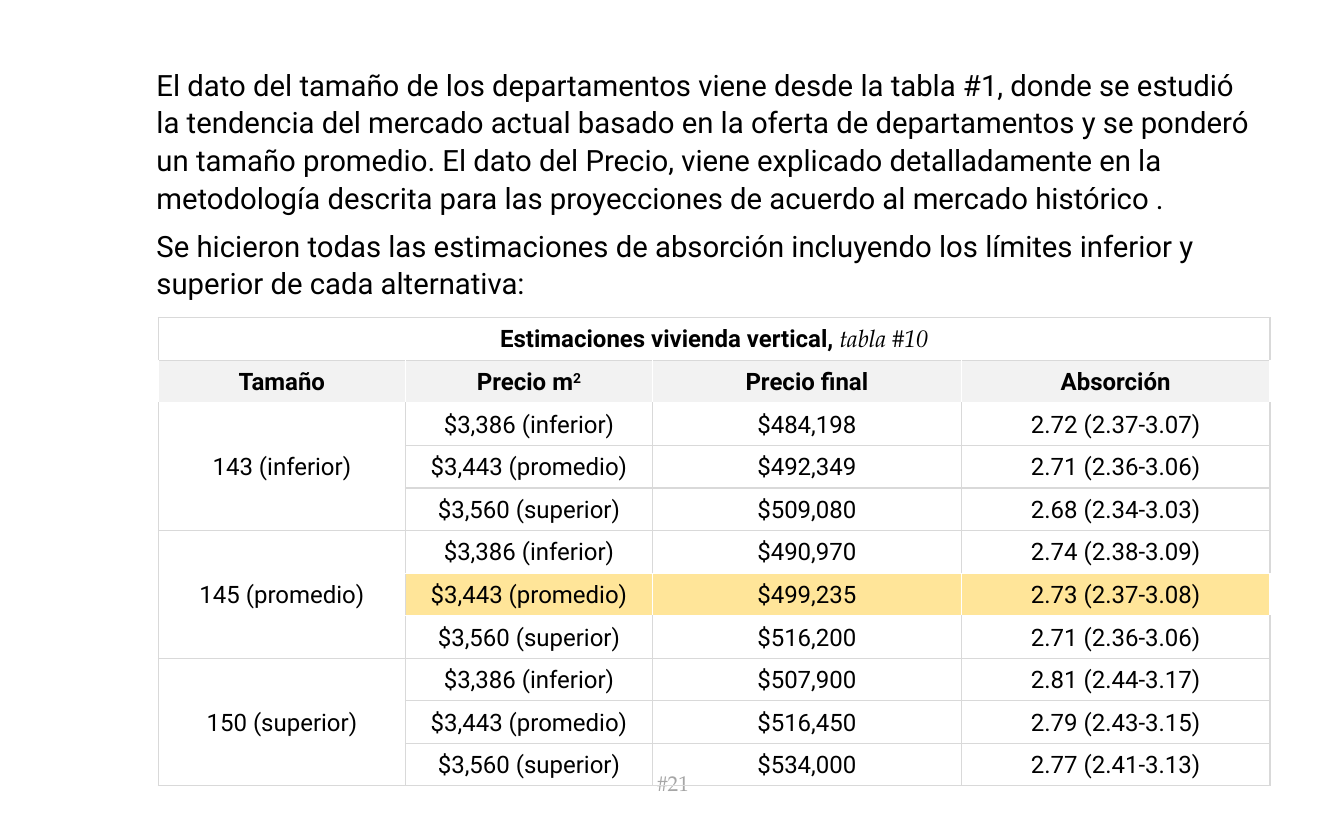
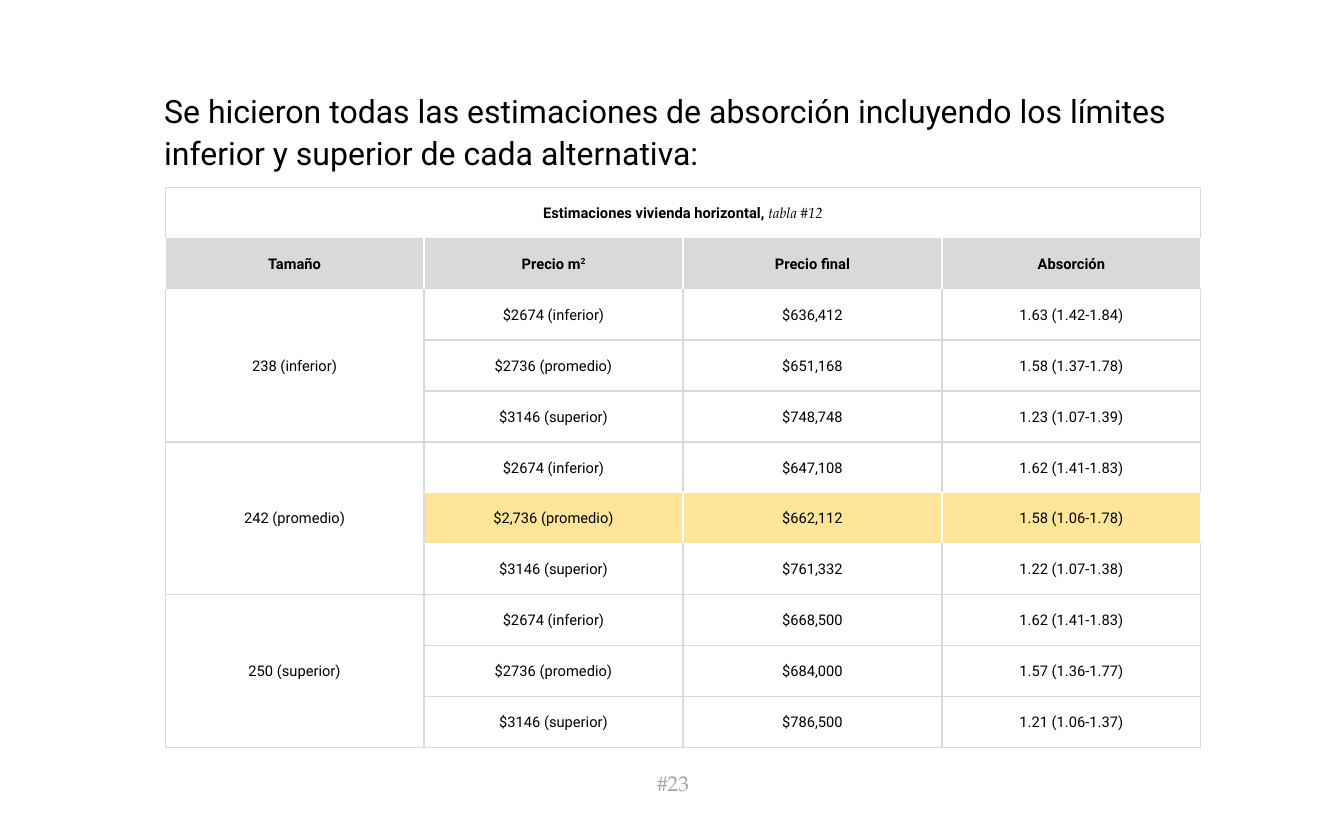
from dataclasses import dataclass

from lxml import etree
from pptx import Presentation, util as u
from pptx.dml.color import RGBColor
from pptx.enum import text
from pptx.oxml.ns import qn


@dataclass(frozen=True)
class Theme:
    sans: str = "Roboto"
    serif: str = "TeX Gyre Pagella"
    ink: str = "000000"
    muted: str = "A6A6A6"
    white: str = "FFFFFF"
    rule: str = "D9D9D9"
    highlight: str = "FFE599"
    footer_size: int = 16
    rule_width: int = 1
    line_spacing: float = 1.07
    space_after: int = 8


THEME = Theme()
HEADINGS = [("Tamaño",), ("Precio m", "2"), ("Precio final",), ("Absorción",)]
TITLE_ROW, HEADING_ROW, HIGHLIGHT_ROW = 0, 1, 6
BODY_INSETS = (0.14, 0.07, 0.14, 0.07)
FOOTER_INSETS = (0.12, 0.02, 0.1, 0.05)
CELL_INSETS = (0.07, 0, 0.07, 0)
FOOTER_BOX = (6.51, 8.04, 0.98, 0.26)
ESTIMATES_INTRO = (
    "Se hicieron todas las estimaciones de absorción incluyendo los límites "
    "inferior y superior de cada alternativa:"
)

PAGES = [
    dict(
        footer="#21",
        intro=[
            "El dato del tamaño de los departamentos viene desde la tabla #1, donde se "
            "estudió la tendencia del mercado actual basado en la oferta de departamentos "
            "y se ponderó un tamaño promedio. El dato del Precio, viene explicado "
            "detalladamente en la metodología descrita para las proyecciones de acuerdo "
            "al mercado histórico .",
            ESTIMATES_INTRO,
        ],
        intro_box=(1.49, 0.6, 11.73, 2.61),
        intro_size=22,
        title=("Estimaciones vivienda vertical, ", "tabla #10"),
        table_box=(1.65, 3.31, 11.58, 4.88),
        column_shares=(4, 4, 5, 5),
        table_size=18,
        heading_fill="F2F2F2",
        groups=[
            ("143 (inferior)", [
                ("$3,386 (inferior)", "$484,198", "2.72 (2.37-3.07)"),
                ("$3,443 (promedio)", "$492,349", "2.71 (2.36-3.06)"),
                ("$3,560 (superior)", "$509,080", "2.68 (2.34-3.03)"),
            ]),
            ("145 (promedio)", [
                ("$3,386 (inferior)", "$490,970", "2.74 (2.38-3.09)"),
                ("$3,443 (promedio)", "$499,235", "2.73 (2.37-3.08)"),
                ("$3,560 (superior)", "$516,200", "2.71 (2.36-3.06)"),
            ]),
            ("150 (superior)", [
                ("$3,386 (inferior)", "$507,900", "2.81 (2.44-3.17)"),
                ("$3,443 (promedio)", "$516,450", "2.79 (2.43-3.15)"),
                ("$3,560 (superior)", "$534,000", "2.77 (2.41-3.13)"),
            ]),
        ],
    ),
    dict(
        footer="#23",
        intro=[ESTIMATES_INTRO],
        intro_box=(1.57, 0.86, 10.95, 0.98),
        intro_size=24,
        title=("Estimaciones vivienda horizontal, ", "tabla #12"),
        table_box=(1.72, 1.95, 10.79, 5.84),
        column_shares=(1, 1, 1, 1),
        table_size=11,
        heading_fill="D9D9D9",
        groups=[
            ("238 (inferior)", [
                ("$2674 (inferior)", "$636,412", "1.63 (1.42-1.84)"),
                ("$2736 (promedio)", "$651,168", "1.58 (1.37-1.78)"),
                ("$3146 (superior)", "$748,748", "1.23 (1.07-1.39)"),
            ]),
            ("242 (promedio)", [
                ("$2674 (inferior)", "$647,108", "1.62 (1.41-1.83)"),
                ("$2,736 (promedio)", "$662,112", "1.58 (1.06-1.78)"),
                ("$3146 (superior)", "$761,332", "1.22 (1.07-1.38)"),
            ]),
            ("250 (superior)", [
                ("$2674 (inferior)", "$668,500", "1.62 (1.41-1.83)"),
                ("$2736 (promedio)", "$684,000", "1.57 (1.36-1.77)"),
                ("$3146 (superior)", "$786,500", "1.21 (1.06-1.37)"),
            ]),
        ],
    ),
]


def inches(lengths):
    return [u.Inches(length) for length in lengths]


def add_run(paragraph, words, size, font=THEME.sans, color=THEME.ink,
            bold=False, italic=False, raised=False):
    run = paragraph.add_run()
    run.text = words
    run.font.name = font
    run.font.size = u.Pt(size)
    run.font.bold = bold
    run.font.italic = italic
    run.font.color.rgb = RGBColor.from_string(color)
    if raised:
        run.font._element.set("baseline", "30000")


def set_insets(holder, insets):
    (holder.margin_left, holder.margin_top,
     holder.margin_right, holder.margin_bottom) = inches(insets)


def space(paragraph):
    paragraph.line_spacing = THEME.line_spacing
    paragraph.space_after = u.Pt(THEME.space_after)


def add_frame(slide, box, insets):
    frame = slide.shapes.add_textbox(*inches(box)).text_frame
    frame.word_wrap = True
    set_insets(frame, insets)
    return frame


def add_footer(slide, page):
    footer = add_frame(slide, FOOTER_BOX, FOOTER_INSETS)
    footer.vertical_anchor = text.MSO_ANCHOR.MIDDLE
    number = footer.paragraphs[0]
    number.alignment = text.PP_ALIGN.CENTER
    add_run(number, page["footer"], THEME.footer_size, THEME.serif, THEME.muted)


def add_intro(slide, page):
    intro = add_frame(slide, page["intro_box"], BODY_INSETS)
    for index, words in enumerate(page["intro"]):
        paragraph = intro.add_paragraph() if index else intro.paragraphs[0]
        space(paragraph)
        add_run(paragraph, words, page["intro_size"])


def is_filled(row, column):
    return row == HEADING_ROW or (row == HIGHLIGHT_ROW and column > 0)


def edge_colors(row, column):
    filled = is_filled(row, column)
    white = {
        "L": filled and (row, column) != (HIGHLIGHT_ROW, 1),
        "R": filled,
        "T": row != HEADING_ROW and (filled or is_filled(row - 1, column)),
        "B": row != TITLE_ROW and (filled or is_filled(row + 1, column)),
    }
    return {side: THEME.white if on else THEME.rule for side, on in white.items()}


def style_cell(cell, row, column, heading_fill):
    set_insets(cell, CELL_INSETS)
    cell.vertical_anchor = text.MSO_ANCHOR.MIDDLE
    properties = cell._tc.get_or_add_tcPr()
    for side, color in edge_colors(row, column).items():
        line = etree.SubElement(properties, qn(f"a:ln{side}"),
                                w=str(u.Pt(THEME.rule_width)))
        fill = etree.SubElement(line, qn("a:solidFill"))
        etree.SubElement(fill, qn("a:srgbClr"), val=color)
    if is_filled(row, column):
        cell.fill.solid()
        color = heading_fill if row == HEADING_ROW else THEME.highlight
        cell.fill.fore_color.rgb = RGBColor.from_string(color)
    else:
        cell.fill.background()


def add_estimates(slide, page):
    size = page["table_size"]
    shares = page["column_shares"]
    row_count = 2 + sum(len(options) for _, options in page["groups"])
    box = inches(page["table_box"])
    estimates = slide.shapes.add_table(row_count, len(HEADINGS), *box).table
    estimates.first_row = estimates.horz_banding = False
    for column, share in zip(estimates.columns, shares):
        column.width = int(box[2] * share / sum(shares))
    for row in estimates.rows:
        row.height = int(box[3] / row_count)
    for row in range(row_count):
        for column in range(len(HEADINGS)):
            style_cell(estimates.cell(row, column), row, column, page["heading_fill"])

    def cell_line(row, column):
        paragraph = estimates.cell(row, column).text_frame.paragraphs[0]
        paragraph.alignment = text.PP_ALIGN.CENTER
        space(paragraph)
        return paragraph

    estimates.cell(TITLE_ROW, 0).merge(estimates.cell(TITLE_ROW, len(HEADINGS) - 1))
    title = cell_line(TITLE_ROW, 0)
    name, reference = page["title"]
    add_run(title, name, size, bold=True)
    add_run(title, reference, size, THEME.serif, italic=True)

    for column, parts in enumerate(HEADINGS):
        heading = cell_line(HEADING_ROW, column)
        for index, part in enumerate(parts):
            add_run(heading, part, size, bold=True, raised=index > 0)

    top = HEADING_ROW + 1
    for dwelling_size, options in page["groups"]:
        estimates.cell(top, 0).merge(estimates.cell(top + len(options) - 1, 0))
        add_run(cell_line(top, 0), dwelling_size, size)
        for row, option in enumerate(options, top):
            for column, value in enumerate(option, 1):
                add_run(cell_line(row, column), value, size)
        top += len(options)


def main():
    deck = Presentation()
    deck.slide_width, deck.slide_height = inches((14, 8.5))
    for page in PAGES:
        slide = deck.slides.add_slide(deck.slide_layouts[6])
        add_footer(slide, page)
        add_intro(slide, page)
        add_estimates(slide, page)
    deck.save("out.pptx")


if __name__ == "__main__":
    main()
